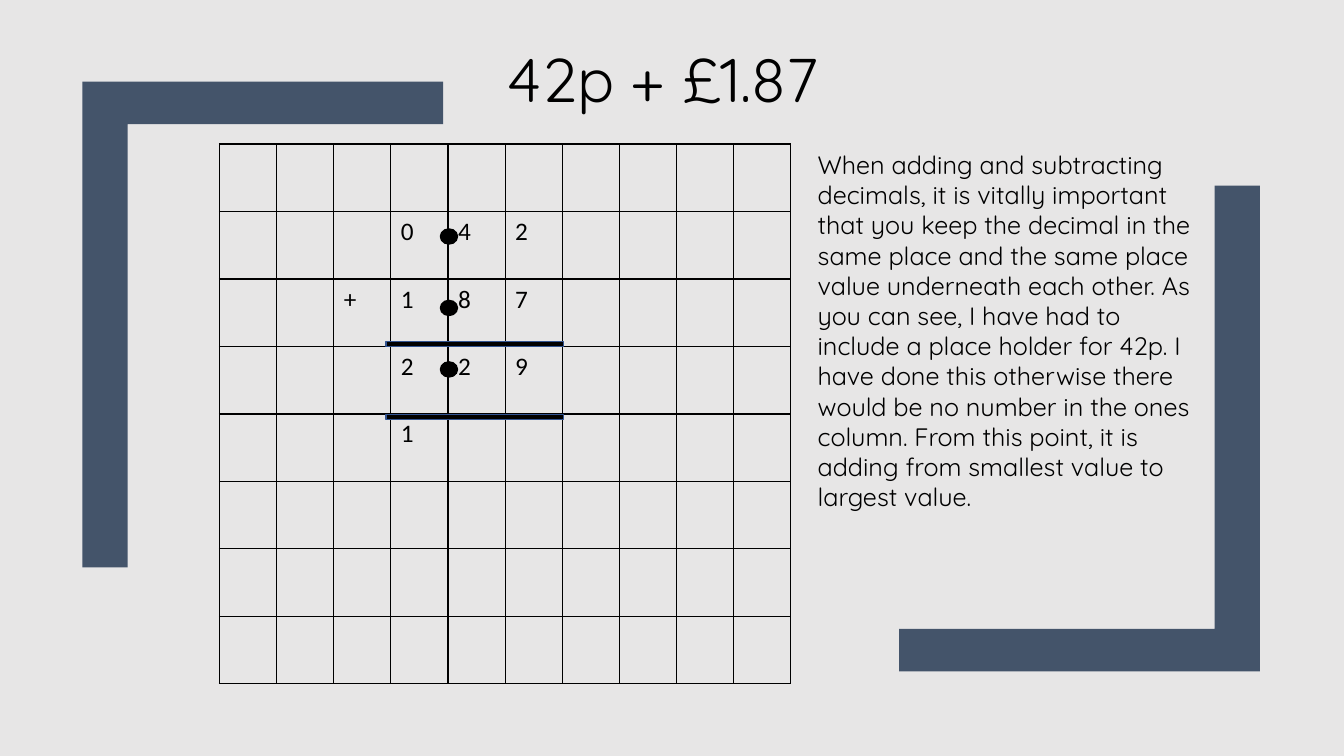
from lxml.etree import SubElement as Sub
from pptx import Presentation
from pptx.dml.color import RGBColor as RGB
from pptx.enum.shapes import MSO_SHAPE as Form
from pptx.enum.text import MSO_ANCHOR as Anchor, MSO_AUTO_SIZE as Fit, PP_ALIGN as Align
from pptx.oxml.ns import qn
from pptx.util import Cm, Pt


def paint(fill, tone):
    fill.solid()
    fill.fore_color.rgb = RGB.from_string(tone)


def write(frame, text, size=18, face="Quicksand", tone="000000", align=Align.LEFT):
    para = frame.paragraphs[0]
    para.alignment = align
    para.space_before = Pt(0)
    run = para.add_run()
    run.text = text
    run.font.size = Pt(size)
    run.font.name = face
    paint(run.font.fill, tone)
    return para


deck = Presentation()
deck.slide_width, deck.slide_height = Cm(33.87), Cm(19.05)
slide = deck.slides.add_slide(deck.slide_layouts[1])
shapes = slide.shapes
paint(slide.background.fill, "E7E6E6")

# Corner brackets: outer corner and the direction of the arms
for x, y, way in [(31.75, 16.92, -1), (2.08, 2.06, 1)]:
    steps = [(0, 0), (9.09, 0), (9.09, 1.07), (1.14, 1.07), (1.14, 12.24), (0, 12.24)]
    points = [(Cm(x + way * dx), Cm(y + way * dy)) for dx, dy in steps]
    pen = shapes.build_freeform(*points[0])
    pen.add_line_segments(points[1:], close=True)
    bracket = pen.convert_to_shape()
    bracket.shadow.inherit = False
    paint(bracket.fill, "44546A")
    bracket.line.fill.background()

# Title and explanation
title, body = shapes.title, slide.placeholders[1]
for holder, box in [(title, (4.23, 0.91, 25.4, 2.13)), (body, (20.35, 3.63, 10, 10.26))]:
    holder.left, holder.top, holder.width, holder.height = map(Cm, box)
    frame = holder.text_frame
    frame.word_wrap = True
    frame.auto_size = Fit.NONE
    frame.vertical_anchor = Anchor.TOP
write(title.text_frame, "42p + £1.87 ", size=44, align=Align.CENTER)
para = write(
    body.text_frame,
    "When adding and subtracting decimals, it is vitally important that you keep "
    "the decimal in the same place and the same place value underneath each other. "
    "As you can see, I have had to include a place holder for 42p. I have done this "
    "otherwise there would be no number in the ones column. From this point, it is "
    "adding from smallest value to largest value.",
)
props = para._p.get_or_add_pPr()
props.set("marL", "0")
props.set("indent", "0")
Sub(props, qn("a:buNone"))

# Squared paper with the column addition
digits = ["", "   042", "  +187", "   229", "   1", "", "", ""]
cols = 10
table = shapes.add_table(len(digits), cols, Cm(5.53), Cm(3.63), Cm(14.4), Cm(13.6)).table
table.first_row = table.horz_banding = False
for r, line in enumerate(digits):
    for c, mark in enumerate(line.ljust(cols)):
        cell = table.cell(r, c)
        if mark.strip():
            write(cell.text_frame, mark, face="Calibri")
        props = cell._tc.get_or_add_tcPr()
        for side in ("lnL", "lnR", "lnT", "lnB"):
            edge = Sub(props, qn(f"a:{side}"), w=str(Pt(1)))
            Sub(Sub(edge, qn("a:solidFill")), qn("a:srgbClr"), val="000000")
        cell.fill.background()

# Decimal points and the rules around the answer
dots = [(Form.OVAL, 11.1, y, 0.43, 0.38, "000000") for y in (5.77, 7.57, 9.12)]
rules = [(Form.RECTANGLE, 9.73, y, 4.47, 0.13, "325491") for y in (8.61, 10.44)]
for form, x, y, w, h, edge in dots + rules:
    mark = shapes.add_shape(form, Cm(x), Cm(y), Cm(w), Cm(h))
    mark.shadow.inherit = False
    paint(mark.fill, "000000")
    paint(mark.line.fill, edge)
    mark.line.width = Pt(1)

deck.save("out.pptx")
